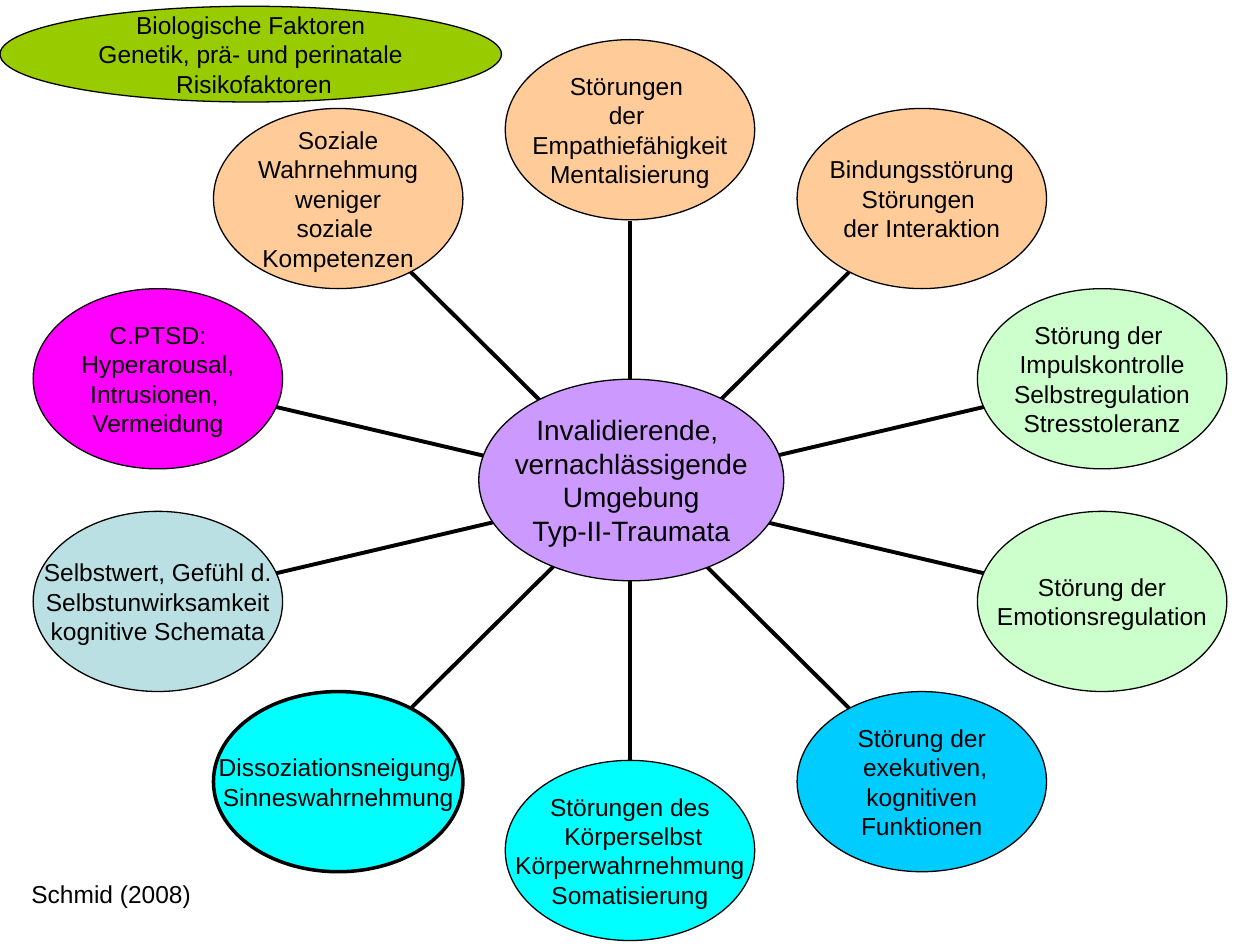
"""Builds a slide with a radial diagram of trauma-related disorders."""
from math import cos, radians, sin

from lxml.etree import SubElement
from pptx import Presentation
from pptx.dml.color import RGBColor
from pptx.enum.shapes import MSO_CONNECTOR, MSO_SHAPE
from pptx.enum.text import MSO_ANCHOR, PP_ALIGN
from pptx.oxml.ns import qn
from pptx.util import Inches, Pt

HUB = (5, 3.89)
RING = (3.94, 2.86)
START = (0.98, 0.71)
END = (2.96, 2.14)
SIZE = (1.98, 1.43)

NODES = [
    ("Störungen \nder \nEmpathiefähigkeit\nMentalisierung", "FFCC99", 0.75),
    ("Bindungsstörung\nStörungen \nder Interaktion", "FFCC99", 0.75),
    ("Störung der \nImpulskontrolle\nSelbstregulation\nStresstoleranz", "CCFFCC", 0.75),
    ("Störung der\nEmotionsregulation", "CCFFCC", 0.75),
    ("Störung der\n exekutiven,\nkognitiven\nFunktionen", "00CCFF", 0.75),
    ("Störungen des\n Körperselbst\nKörperwahrnehmung\nSomatisierung", "00FFFF", 0.75),
    ("Dissoziationsneigung/\nSinneswahrnehmung", "00FFFF", 2),
    ("Selbstwert, Gefühl d.\nSelbstunwirksamkeit\nkognitive Schemata", "BBE0E3", 0.75),
    ("C.PTSD:\nHyperarousal,\nIntrusionen, \nVermeidung", "FF00FF", 0.75),
    ("Soziale\nWahrnehmung\nweniger\nsoziale \nKompetenzen", "FFCC99", 0.75),
]


def color(code):
    return RGBColor.from_string(code)


def write(frame, text, size=14, align=PP_ALIGN.LEFT, font="Arial", ink="000000"):
    for row, line in enumerate(text.split("\n")):
        para = frame.add_paragraph() if row else frame.paragraphs[0]
        para.alignment = align
        run = para.add_run()
        run.text = line
        run.font.name = font
        run.font.size = Pt(size)
        run.font.color.rgb = color(ink)


def orbit(radii, turn):
    angle = radians(turn)
    return HUB[0] + radii[0] * sin(angle), HUB[1] - radii[1] * cos(angle)


class Canvas:
    def __init__(self, slide, ink="000000"):
        self.shapes = slide.shapes
        self.ink = ink

    def oval(self, mid, size, text, fill, width=0.75, points=14):
        left, top = (m - s / 2 for m, s in zip(mid, size))
        shape = self.shapes.add_shape(
            MSO_SHAPE.OVAL, Inches(left), Inches(top), Inches(size[0]), Inches(size[1]))
        shape.shadow.inherit = False
        shape.fill.solid()
        shape.fill.fore_color.rgb = color(fill)
        shape.line.color.rgb = color(self.ink)
        shape.line.width = Pt(width)
        frame = shape.text_frame
        frame.word_wrap = False
        frame.vertical_anchor = MSO_ANCHOR.MIDDLE
        frame.margin_left = frame.margin_right = 0
        frame.margin_top = frame.margin_bottom = 0
        write(frame, text, points, PP_ALIGN.CENTER, ink=self.ink)

    def spoke(self, start, end, width=2.25):
        line = self.shapes.add_connector(
            MSO_CONNECTOR.STRAIGHT, *(Inches(v) for v in (*start, *end)))
        line.line.color.rgb = color(self.ink)
        line.line.width = Pt(width)
        SubElement(line._element.spPr, qn("a:effectLst"))

    def note(self, left, top, width, height, text):
        box = self.shapes.add_textbox(*(Inches(v) for v in (left, top, width, height)))
        box.text_frame.word_wrap = True
        write(box.text_frame, text, ink=self.ink)


def main():
    deck = Presentation()
    deck.slide_width, deck.slide_height = Inches(10), Inches(7.5)
    canvas = Canvas(deck.slides.add_slide(deck.slide_layouts[6]))
    step = 360 / len(NODES)
    for index, (text, fill, width) in enumerate(NODES):
        turn = index * step
        canvas.spoke(orbit(START, turn), orbit(END, turn))
        canvas.oval(orbit(RING, turn), SIZE, text, fill, width)
    canvas.oval((5.01, 3.81), (2.42, 1.6),
                "Invalidierende, \nvernachlässigende\nUmgebung\nTyp-II-Traumata",
                "CC99FF", points=16)
    canvas.oval((1.99, 0.43), (3.98, 0.76),
                "Biologische Faktoren\nGenetik, prä- und perinatale\n Risikofaktoren",
                "99CC00")
    canvas.note(0.15, 6.93, 1.62, 0.33, "Schmid (2008)")
    deck.save("out.pptx")


if __name__ == "__main__":
    main()
